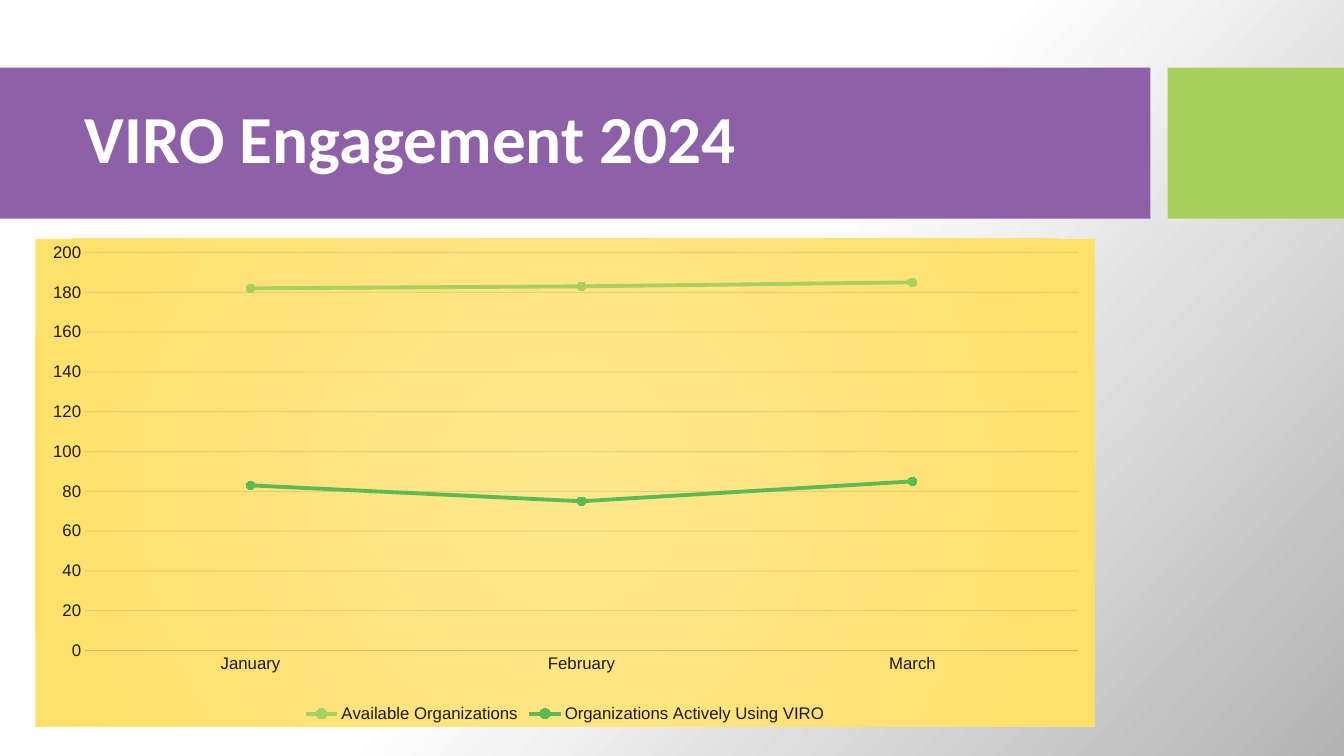
from pptx import Presentation
from pptx.chart.data import CategoryChartData
from pptx.dml.color import RGBColor
from pptx.enum.chart import XL_CHART_TYPE, XL_LEGEND_POSITION, XL_MARKER_STYLE, XL_TICK_MARK
from pptx.enum.shapes import MSO_SHAPE
from pptx.enum.text import MSO_ANCHOR
from pptx.oxml import parse_xml
from pptx.oxml.ns import nsdecls, qn
from pptx.util import Inches, Pt

WHITE = RGBColor(0xFF, 0xFF, 0xFF)
GRAY = RGBColor(0xB3, 0xB3, 0xB3)
PURPLE = RGBColor(0x8D, 0x60, 0xA8)
LIME = RGBColor(0xA7, 0xD0, 0x5E)
GREEN = RGBColor(0x5B, 0xBA, 0x54)
PALE_YELLOW = RGBColor(0xFF, 0xE7, 0x8D)
YELLOW = RGBColor(0xFF, 0xE0, 0x6A)
INK = RGBColor(0x1E, 0x1A, 0x1B)
RULE = RGBColor(0x21, 0x1D, 0x1E)

MONTHS = ["January", "February", "March"]
ENGAGEMENT = [
    ("Available Organizations", [182, 183, 185], LIME),
    ("Organizations Actively Using VIRO", [83, 75, 85], GREEN),
]
PLOT_LAYOUT = {"x": 0.047, "y": 0.028, "w": 0.937, "h": 0.816}


def set_format(target, values):
    for name, value in values.items():
        setattr(target, name, value)


def gradient(stops, direction):
    marks = "".join(
        f'<a:gs pos="{position * 1000}"><a:srgbClr val="{color}"/></a:gs>'
        for position, color in stops
    )
    return parse_xml(
        f'<a:gradFill {nsdecls("a")} rotWithShape="1">'
        f"<a:gsLst>{marks}</a:gsLst>{direction}</a:gradFill>"
    )


def paint_background(slide):
    slide.background.fill.solid()
    solid = slide.element.find(".//" + qn("a:solidFill"))
    solid.getparent().replace(
        solid,
        gradient(
            [(0, WHITE), (50, WHITE), (100, GRAY)],
            f'<a:lin ang="{42 * 60000}" scaled="0"/>',
        ),
    )


def add_block(slide, left, top, width, height, color):
    block = slide.shapes.add_shape(MSO_SHAPE.RECTANGLE, left, top, width, height)
    block.shadow.inherit = False
    block.fill.solid()
    block.fill.fore_color.rgb = color
    block.line.fill.background()


def add_banner(slide, left, top, width, height):
    accent_width = Inches(1.75)
    gap = Inches(0.17)
    add_block(slide, left, top, width - accent_width - gap, height, PURPLE)
    add_block(slide, left + width - accent_width, top, accent_width, height, LIME)
    heading = slide.shapes.add_textbox(
        left + Inches(0.74), top + Inches(0.15), Inches(10.51), Inches(1.18)
    ).text_frame
    set_format(heading, {"word_wrap": True, "vertical_anchor": MSO_ANCHOR.MIDDLE})
    title = heading.paragraphs[0]
    title.text = "VIRO Engagement 2024"
    title.line_spacing = 0.9
    set_format(title.font, {"name": "Calibri", "size": Pt(48), "bold": True})
    title.font.color.rgb = WHITE


def style_axes(chart):
    months, counts = chart.category_axis, chart.value_axis
    for axis in (months, counts):
        set_format(axis, {
            "major_tick_mark": XL_TICK_MARK.NONE,
            "minor_tick_mark": XL_TICK_MARK.NONE,
        })
    set_format(counts, {
        "minimum_scale": 0,
        "maximum_scale": 200,
        "major_unit": 20,
        "has_major_gridlines": True,
    })
    counts.format.line.fill.background()
    for rule in (months.format.line, counts.major_gridlines.format.line):
        rule.width = Pt(0.75)
        rule.color.rgb = RULE
    for color in chart.element.iter(qn("a:srgbClr")):
        if color.get("val") == str(RULE):
            color.append(parse_xml(f'<a:alpha {nsdecls("a")} val="10000"/>'))


def style_series(chart):
    for series, (_, _, color) in zip(chart.plots[0].series, ENGAGEMENT):
        series.smooth = False
        series.format.line.width = Pt(2.75)
        series.format.line.color.rgb = color
        set_format(series.marker, {"style": XL_MARKER_STYLE.CIRCLE, "size": 6})
        series.marker.format.fill.solid()
        series.marker.format.fill.fore_color.rgb = color
        series.marker.format.line.color.rgb = color


def place_plot(chart):
    plot_area = chart.element.find(".//" + qn("c:plotArea"))
    for layout in plot_area.findall(qn("c:layout")):
        plot_area.remove(layout)
    sizes = "".join(f'<c:{key} val="{value}"/>' for key, value in PLOT_LAYOUT.items())
    plot_area.insert(0, parse_xml(
        f'<c:layout {nsdecls("c")}><c:manualLayout><c:layoutTarget val="inner"/>'
        f'<c:xMode val="edge"/><c:yMode val="edge"/>{sizes}</c:manualLayout></c:layout>'
    ))


def fill_chart(chart):
    panel = parse_xml(f'<c:spPr {nsdecls("c", "a")}><a:ln><a:noFill/></a:ln></c:spPr>')
    panel.insert(0, gradient(
        [(0, PALE_YELLOW), (100, YELLOW)],
        '<a:path path="circle"><a:fillToRect l="50000" t="50000" r="50000" b="50000"/></a:path>',
    ))
    chart.element.find(qn("c:chart")).addnext(panel)


def add_engagement_chart(slide, left, top, width, height):
    data = CategoryChartData()
    data.categories = MONTHS
    for name, values, _ in ENGAGEMENT:
        data.add_series(name, values)
    chart = slide.shapes.add_chart(
        XL_CHART_TYPE.LINE_MARKERS, left, top, width, height, data
    ).chart
    set_format(chart, {"has_title": False, "has_legend": True})
    set_format(chart.font, {"name": "Arial", "size": Pt(12)})
    chart.font.color.rgb = INK
    set_format(chart.legend, {
        "position": XL_LEGEND_POSITION.BOTTOM,
        "include_in_layout": False,
    })
    chart.plots[0].vary_by_categories = False
    style_axes(chart)
    style_series(chart)
    place_plot(chart)
    fill_chart(chart)


def main():
    deck = Presentation()
    set_format(deck, {"slide_width": Inches(13.33), "slide_height": Inches(7.5)})
    slide = deck.slides.add_slide(deck.slide_layouts[6])
    paint_background(slide)
    add_banner(slide, Inches(0), Inches(0.67), deck.slide_width, Inches(1.5))
    add_engagement_chart(slide, Inches(0.35), Inches(2.37), Inches(10.51), Inches(4.84))
    deck.save("out.pptx")


if __name__ == "__main__":
    main()
